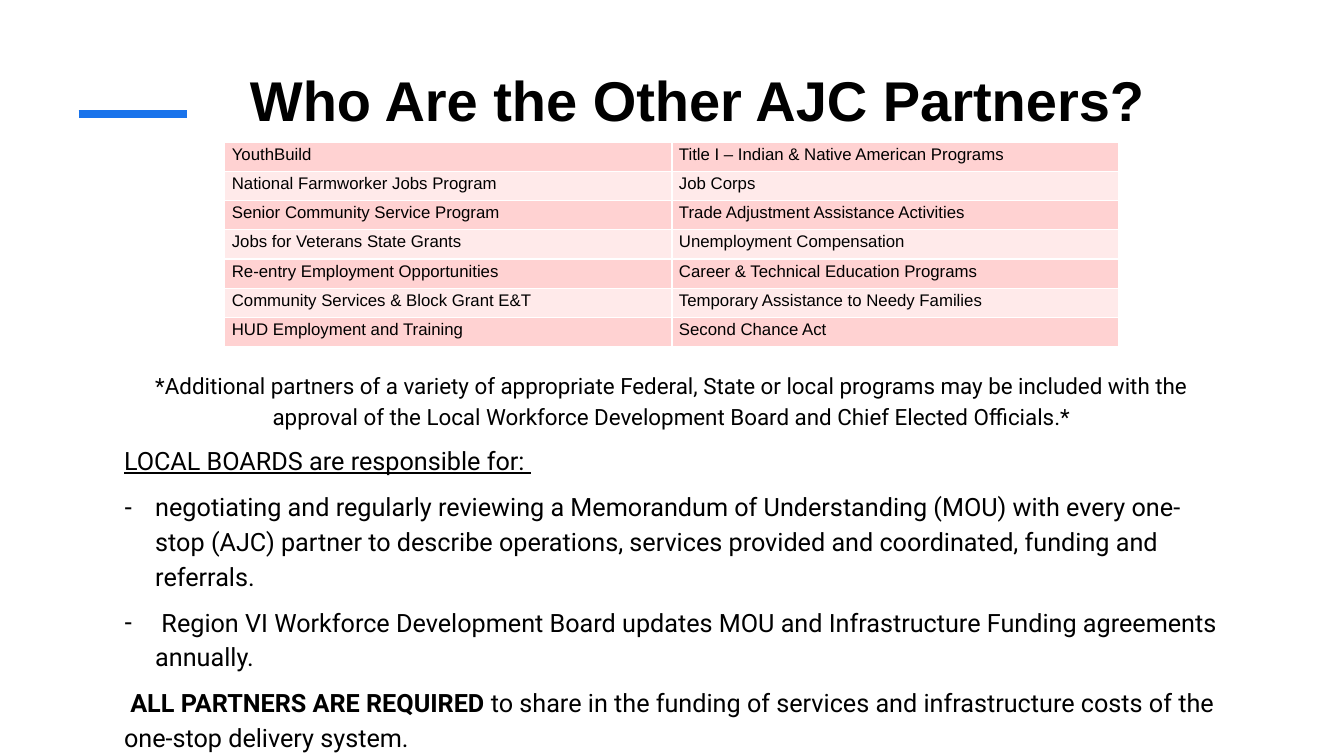
from lxml import etree
from pptx import Presentation
from pptx import util as u
from pptx.dml.color import RGBColor
from pptx.enum import shapes, text
from pptx.oxml.ns import qn

COLOURS = {
    "text": "000000",
    "accent": "1973EB",
    "dark_band": "FFD2D2",
    "light_band": "FFEAEA",
    "border": "FFFFFF",
}
PARTNERS = [
    ("YouthBuild", "Title I – Indian & Native American Programs"),
    ("National Farmworker Jobs Program", "Job Corps"),
    ("Senior Community Service Program", "Trade Adjustment Assistance Activities"),
    ("Jobs for Veterans State Grants", "Unemployment Compensation"),
    ("Re-entry Employment Opportunities", "Career & Technical Education Programs"),
    ("Community Services & Block Grant E&T", "Temporary Assistance to Needy Families"),
    ("HUD Employment and Training", "Second Chance Act"),
]
DUTIES = [
    "negotiating and regularly reviewing a Memorandum of Understanding (MOU) with every "
    "one-stop (AJC) partner to describe operations, services provided and coordinated, "
    "funding and referrals.",
    " Region VI Workforce Development Board updates MOU and Infrastructure Funding "
    "agreements annually.",
]


def colour(name):
    return RGBColor.from_string(COLOURS[name])


def add_span(para, words, size=18, font="Roboto", bold=False, underline=False):
    span = para.add_run()
    span.text = words
    span.font.size = u.Pt(size)
    span.font.name = font
    span.font.bold = bold
    span.font.underline = underline
    span.font.color.rgb = colour("text")


def space(para):
    para.line_spacing = 1.15
    para.space_before = u.Pt(0)
    para.space_after = u.Pt(8)


def add_body_para(frame, first=False, align=text.PP_ALIGN.LEFT, bullet=None):
    para = frame.paragraphs[0] if first else frame.add_paragraph()
    para.alignment = align
    space(para)
    properties = para._p.get_or_add_pPr()
    indent = u.Inches(0.31) if bullet else 0
    properties.set("marL", str(indent))
    properties.set("indent", str(-indent))
    if bullet:
        etree.SubElement(properties, qn("a:buChar")).set("char", bullet)
    else:
        etree.SubElement(properties, qn("a:buNone"))
    return para


def place(box, left, top, width, height):
    box.left, box.top = u.Inches(left), u.Inches(top)
    box.width, box.height = u.Inches(width), u.Inches(height)


def add_accent(page):
    line = page.shapes.add_connector(
        shapes.MSO_CONNECTOR.STRAIGHT,
        u.Inches(0.78), u.Inches(1.13), u.Inches(1.85), u.Inches(1.13),
    )
    line.line.color.rgb = colour("accent")
    line.line.width = u.Pt(6)
    etree.SubElement(line._element.spPr, qn("a:effectLst"))


def fill_title(page):
    title = page.shapes.title
    place(title, 0.71, 0.56, 11.91, 0.85)
    frame = title.text_frame
    frame.auto_size = text.MSO_AUTO_SIZE.NONE
    frame.vertical_anchor = text.MSO_ANCHOR.MIDDLE
    para = frame.paragraphs[0]
    para.alignment = text.PP_ALIGN.CENTER
    add_span(para, "\tWho Are the Other AJC Partners?", size=40, font="Arial", bold=True)


def add_borders(cell):
    properties = cell._tc.get_or_add_tcPr()
    for index, side in enumerate(("a:lnL", "a:lnR", "a:lnT", "a:lnB")):
        border = etree.Element(qn(side), w=str(u.Pt(1)))
        fill = etree.SubElement(border, qn("a:solidFill"))
        etree.SubElement(fill, qn("a:srgbClr")).set("val", COLOURS["border"])
        properties.insert(index, border)


def format_cell(cell, words, band):
    cell.fill.solid()
    cell.fill.fore_color.rgb = colour(band)
    cell.margin_left = cell.margin_right = u.Inches(0.07)
    cell.margin_top = cell.margin_bottom = 0
    para = cell.text_frame.paragraphs[0]
    space(para)
    add_span(para, words, size=12, font="Arial")
    add_borders(cell)


def add_partner_table(page):
    table = page.shapes.add_table(
        len(PARTNERS), 2, u.Inches(2.23), u.Inches(1.41), u.Inches(8.87), u.Inches(2.03)
    ).table
    table.first_row = False
    table.horz_banding = False
    for row_index, names in enumerate(PARTNERS):
        table.rows[row_index].height = u.Inches(0.29)
        band = "light_band" if row_index % 2 else "dark_band"
        for column_index, name in enumerate(names):
            format_cell(table.cell(row_index, column_index), name, band)


def fill_body(page):
    body = page.placeholders[1]
    place(body, 1.13, 3.6, 11.06, 4.02)
    frame = body.text_frame
    frame.word_wrap = True
    frame.auto_size = text.MSO_AUTO_SIZE.SHAPE_TO_FIT_TEXT
    frame.vertical_anchor = text.MSO_ANCHOR.TOP
    add_span(
        add_body_para(frame, first=True, align=text.PP_ALIGN.CENTER),
        "*Additional partners of a variety of appropriate Federal, State or local programs "
        "may be included with the approval of the Local Workforce Development Board and "
        "Chief Elected Officials.*",
        size=16,
    )
    add_span(add_body_para(frame), "LOCAL BOARDS are responsible for: ", underline=True)
    for duty in DUTIES:
        add_span(add_body_para(frame, bullet="-"), duty)
    closing = add_body_para(frame)
    add_span(closing, " ALL PARTNERS ARE REQUIRED", bold=True)
    add_span(
        closing,
        " to share in the funding of services and infrastructure costs of the "
        "one-stop delivery system.",
    )


def main():
    deck = Presentation()
    deck.slide_width, deck.slide_height = u.Inches(13.33), u.Inches(7.5)
    page = deck.slides.add_slide(deck.slide_layouts[1])
    add_accent(page)
    fill_title(page)
    add_partner_table(page)
    fill_body(page)
    deck.save("out.pptx")


if __name__ == "__main__":
    main()
